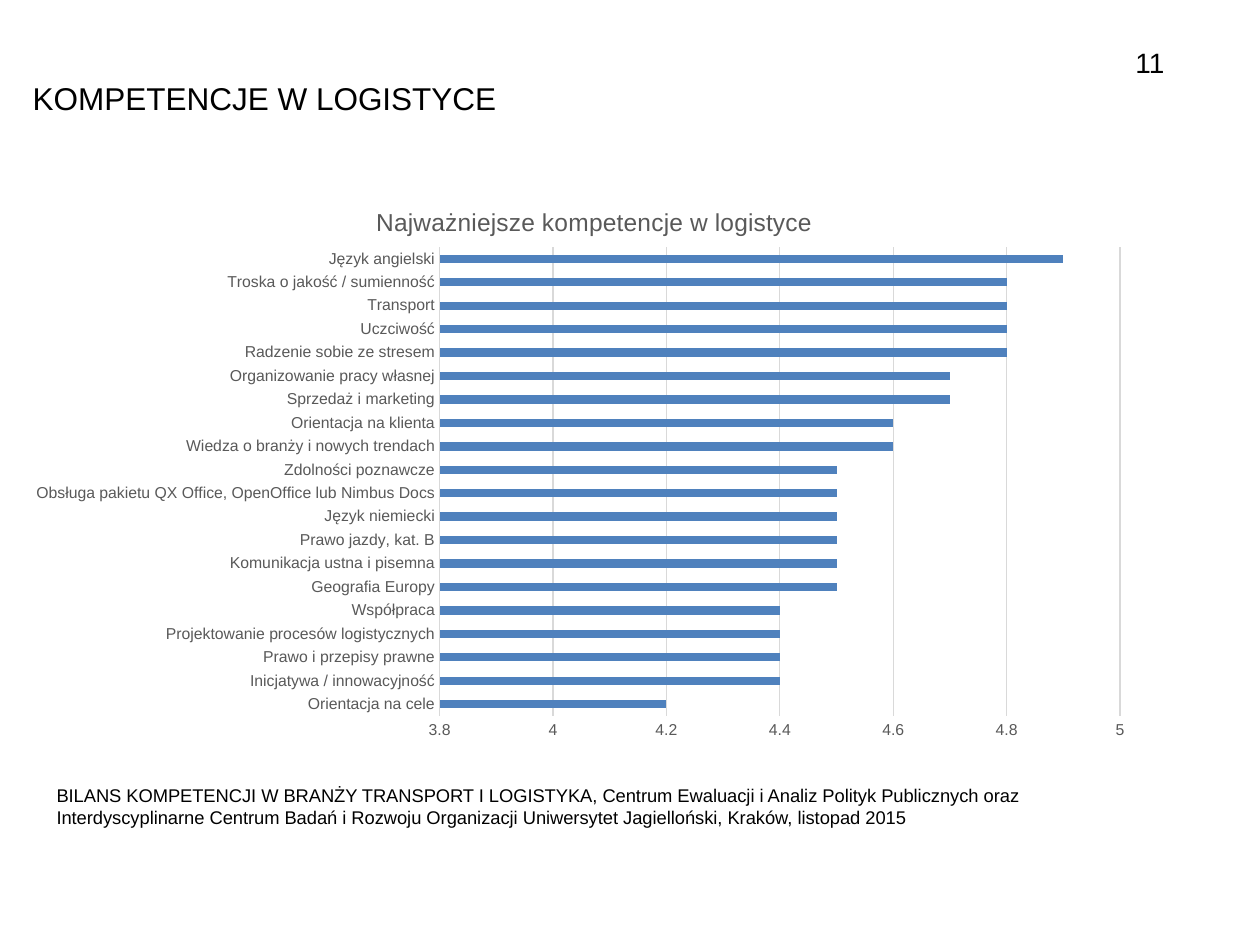
from lxml import etree
from pptx import Presentation
from pptx.chart.data import CategoryChartData
from pptx.dml.color import RGBColor
from pptx.enum.chart import XL_CHART_TYPE, XL_TICK_MARK
from pptx.enum.text import MSO_ANCHOR, PP_ALIGN
from pptx.oxml.ns import qn
from pptx.util import Inches, Pt

WIDE, HIGH = Inches(10), Inches(7.5)
BLACK = RGBColor(0, 0, 0)
GRAY = RGBColor(0x59, 0x59, 0x59)
PALE = RGBColor(0xD9, 0xD9, 0xD9)
BLUE = RGBColor(0x4F, 0x81, 0xBD)
BARS = XL_CHART_TYPE.BAR_CLUSTERED
NO_TICK = XL_TICK_MARK.NONE
TOP, MIDDLE = MSO_ANCHOR.TOP, MSO_ANCHOR.MIDDLE
LEFT, RIGHT = PP_ALIGN.LEFT, PP_ALIGN.RIGHT

SKILLS = [
    ("Orientacja na cele", 4.2),
    ("Inicjatywa / innowacyjność", 4.4),
    ("Prawo i przepisy prawne", 4.4),
    ("Projektowanie procesów logistycznych", 4.4),
    ("Współpraca", 4.4),
    ("Geografia Europy", 4.5),
    ("Komunikacja ustna i pisemna", 4.5),
    ("Prawo jazdy, kat. B", 4.5),
    ("Język niemiecki", 4.5),
    ("Obsługa pakietu QX Office, OpenOffice lub Nimbus Docs", 4.5),
    ("Zdolności poznawcze", 4.5),
    ("Wiedza o branży i nowych trendach", 4.6),
    ("Orientacja na klienta", 4.6),
    ("Sprzedaż i marketing", 4.7),
    ("Organizowanie pracy własnej", 4.7),
    ("Radzenie sobie ze stresem", 4.8),
    ("Uczciwość", 4.8),
    ("Transport", 4.8),
    ("Troska o jakość / sumienność", 4.8),
    ("Język angielski", 4.9),
]
SOURCE = (
    "BILANS KOMPETENCJI W BRANŻY TRANSPORT I LOGISTYKA, "
    "Centrum Ewaluacji i Analiz Polityk Publicznych oraz "
    "Interdyscyplinarne Centrum Badań i Rozwoju Organizacji "
    "Uniwersytet Jagielloński, Kraków, listopad 2015"
)


def area(left, top, width, height):
    """Turn percent of the slide's size into lengths."""
    return [int(share * side / 100) for share, side in
            zip((left, top, width, height), (WIDE, HIGH, WIDE, HIGH))]


def set_font(font, size, color):
    font.name, font.size, font.bold = "Arial", Pt(size), False
    font.color.rgb = color


def fill_text(shape, text, size, align=LEFT, anchor=TOP):
    frame = shape.text_frame
    frame.text, frame.word_wrap, frame.vertical_anchor = text, True, anchor
    para = frame.paragraphs[0]
    para.alignment = align
    set_font(para.font, size, BLACK)


def add_title(slide, text):
    title = slide.shapes.title
    title.left, title.top, title.width, title.height = area(1.6, 7.7, 81.2, 9.7)
    fill_text(title, text, 18)


def add_text(slide, place, *style):
    fill_text(slide.shapes.add_textbox(*area(*place)), *style)


def pin(parent, index, **marks):
    """Fix the place of a chart part, in shares of the chart's size."""
    for old in parent.findall(qn("c:layout")):
        parent.remove(old)
    layout = etree.Element(qn("c:layout"))
    manual = etree.SubElement(layout, qn("c:manualLayout"))
    for tag, value in marks.items():
        etree.SubElement(manual, qn("c:" + tag)).set("val", str(value))
    parent.insert(index, layout)


def style_axis(axis):
    axis.major_tick_mark = axis.minor_tick_mark = NO_TICK
    set_font(axis.tick_labels.font, 9, GRAY)


def style_line(line):
    line.color.rgb, line.width = PALE, Pt(0.75)


def add_bars(slide, place, head, rows):
    data = CategoryChartData(number_format="General")
    names, values = zip(*rows)
    data.categories = names
    data.add_series("Series 1", values)
    chart = slide.shapes.add_chart(BARS, *area(*place), data).chart
    set_font(chart.font, 10, BLACK)
    chart.has_legend = False

    chart.has_title = True
    title = chart.chart_title
    title.text_frame.text = head
    set_font(title.text_frame.paragraphs[0].font, 14, GRAY)
    title.include_in_layout = False

    plot = chart.plots[0]
    plot.gap_width, plot.vary_by_categories = 182, False
    fill = plot.series[0].format.fill
    fill.solid()
    fill.fore_color.rgb = BLUE

    cats, vals = chart.category_axis, chart.value_axis
    style_axis(cats)
    style_line(cats.format.line)
    style_axis(vals)
    vals.minimum_scale, vals.maximum_scale, vals.major_unit = 3.8, 5, 0.2
    vals.format.line.fill.background()
    style_line(vals.major_gridlines.format.line)

    root = cats._element.getparent()
    pin(root, 0, layoutTarget="inner", xMode="edge", yMode="edge",
        x=0.37, y=0.12, w=0.6, h=0.82)
    pin(root.getparent().find(qn("c:title")), 1,
        xMode="edge", yMode="edge", x=0.31, y=0.04)


def main():
    deck = Presentation()
    deck.slide_width, deck.slide_height = WIDE, HIGH
    slide = deck.slides.add_slide(deck.slide_layouts[5])
    add_title(slide, "KOMPETENCJE W LOGISTYCE")
    add_text(slide, (70, 3.1, 23.4, 6.9), "11", 16, RIGHT, MIDDLE)
    add_bars(slide, (1.6, 18.9, 90, 60.5),
             "Najważniejsze kompetencje w logistyce", SKILLS)
    add_text(slide, (3.5, 82.3, 89.8, 6), SOURCE, 10.5)
    deck.save("out.pptx")


if __name__ == "__main__":
    main()
